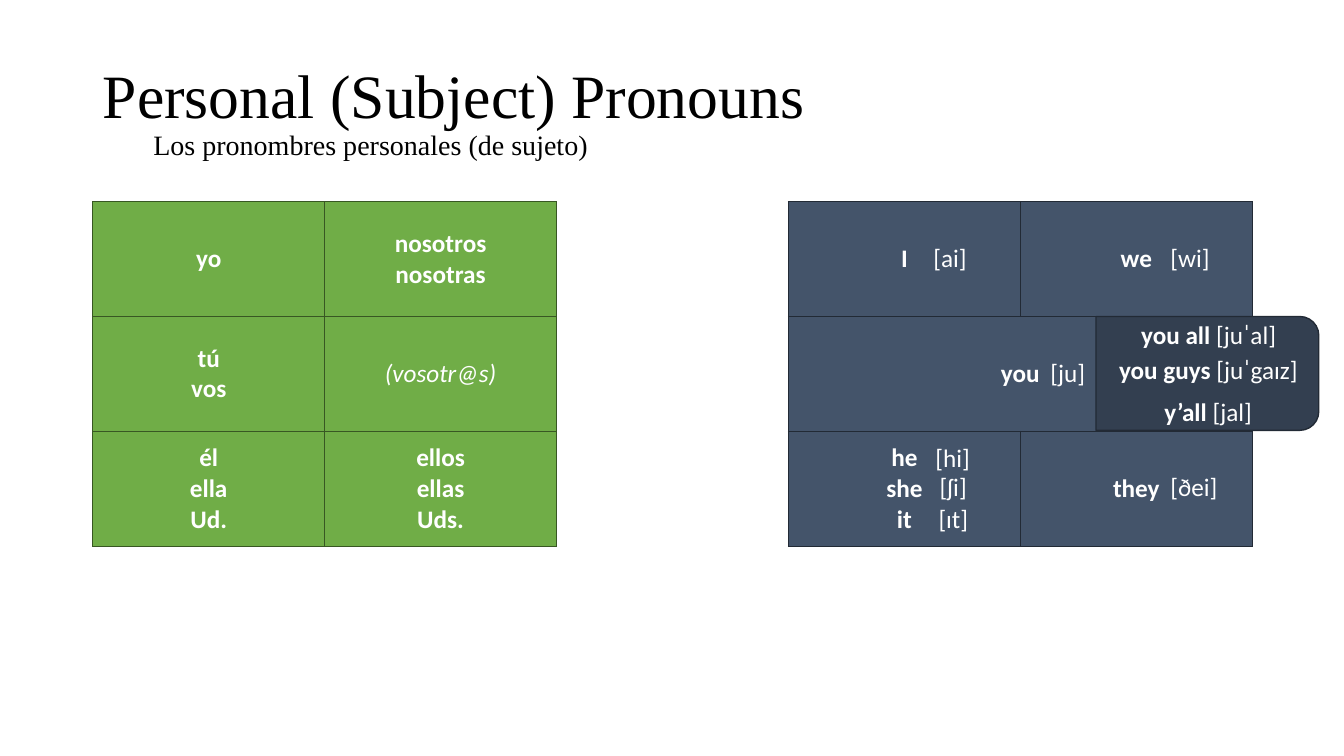
from dataclasses import dataclass

from lxml.etree import SubElement
from pptx import Presentation
from pptx.dml.color import RGBColor
from pptx.enum.shapes import MSO_SHAPE
from pptx.enum.text import MSO_ANCHOR, MSO_AUTO_SIZE, PP_ALIGN
from pptx.oxml.ns import qn
from pptx.slide import Slide
from pptx.table import _Cell
from pptx.util import Inches, Pt

COLORS = {
    "black": "000000",
    "white": "FFFFFF",
    "spanish": "70AD47",
    "spanish_line": "385723",
    "english": "44546A",
    "english_line": "222A35",
    "plural_you": "333F50",
}
COLUMN_WIDTH = 2.3
ROW_HEIGHT = 1.14
GAP_COLUMN = 2
PRONOUNS = [
    ["yo", "nosotros\nnosotras", "", "I", "we"],
    ["tú\nvos", "(vosotr@s)", "", "you", ""],
    ["él\nella\nUd.", "ellos\nellas\nUds.", "", "he\nshe\nit", "they"],
]


@dataclass
class Sound:
    """A pronunciation label, with the bold word before it if there is one."""
    text: str
    left: float
    top: float
    width: float
    word: str = ""


TABLE_SOUNDS = [
    Sound("[ai]", 9.16, 2.35, 0.54),
    Sound("[wi]", 11.51, 2.35, 0.59),
    Sound("[ju]", 10.32, 3.5, 0.55),
    Sound("[hi]", 9.18, 4.34, 0.55),
    Sound("[ʃi]", 9.22, 4.63, 0.47),
    Sound("[ɪt]", 9.21, 4.94, 0.52),
    Sound("[ðei]", 11.51, 4.63, 0.67),
]
PLURAL_SOUNDS = [
    Sound("[juˈal]", 11.22, 3.12, 1.55, "you all "),
    Sound("[juˈgaɪz]", 11, 3.47, 1.99, "you guys "),
    Sound("[jal]", 11.45, 3.88, 1.08, "y’all "),
]


def color(name: str) -> RGBColor:
    return RGBColor.from_string(COLORS[name])


def format_font(font, size: float, name: str = "Calibri", shade: str = "white") -> None:
    font.size = Pt(size)
    font.name = name
    font.color.rgb = color(shade)


def set_borders(cell: _Cell, **sides: str) -> None:
    """Draw the sides named L, R, T, B in the given colours and clear the rest."""
    properties = cell._tc.get_or_add_tcPr()
    for side in "LRTB":
        line = SubElement(properties, qn(f"a:ln{side}"), w=str(Pt(1)))
        if side in sides:
            fill = SubElement(line, qn("a:solidFill"))
            SubElement(fill, qn("a:srgbClr"), val=COLORS[sides[side]])
        else:
            SubElement(line, qn("a:noFill"))


def add_title(page: Slide) -> None:
    title = page.shapes.title
    title.left, title.top = Inches(0.92), Inches(0.4)
    title.width, title.height = Inches(11.5), Inches(1.45)
    frame = title.text_frame
    frame.text = "Personal (Subject) Pronouns\v\tLos pronombres personales (de sujeto)"
    frame.word_wrap = True
    frame.auto_size = MSO_AUTO_SIZE.NONE
    frame.vertical_anchor = MSO_ANCHOR.MIDDLE
    para = frame.paragraphs[0]
    para.alignment = PP_ALIGN.LEFT
    para.line_spacing = 0.9
    for span, size in zip(para.runs, (44, 20)):
        format_font(span.font, size, "Times New Roman", "black")


def fill_cell(cell: _Cell, text: str, column: int) -> None:
    if column == GAP_COLUMN:
        set_borders(cell, L="spanish_line", R="english_line")
        cell.fill.background()
        return
    language = "spanish" if column < GAP_COLUMN else "english"
    set_borders(cell, **dict.fromkeys("LRTB", f"{language}_line"))
    cell.fill.solid()
    cell.fill.fore_color.rgb = color(language)
    cell.vertical_anchor = MSO_ANCHOR.MIDDLE
    cell.text_frame.text = text
    for para in cell.text_frame.paragraphs:
        para.alignment = PP_ALIGN.CENTER
        for span in para.runs:
            format_font(span.font, 18)
            span.font.italic = text.startswith("(")
            span.font.bold = not span.font.italic


def add_pronoun_table(page: Slide) -> None:
    rows, columns = len(PRONOUNS), len(PRONOUNS[0])
    table = page.shapes.add_table(
        rows, columns, Inches(0.92), Inches(2),
        Inches(COLUMN_WIDTH * columns), Inches(ROW_HEIGHT * rows)).table
    table.first_row = table.horz_banding = False
    for column in table.columns:
        column.width = Inches(COLUMN_WIDTH)
    for row in table.rows:
        row.height = Inches(ROW_HEIGHT)
    for row_index, words in enumerate(PRONOUNS):
        for column_index, text in enumerate(words):
            fill_cell(table.cell(row_index, column_index), text, column_index)
    table.cell(1, 3).merge(table.cell(1, 4))


def add_plural_panel(page: Slide) -> None:
    panel = page.shapes.add_shape(
        MSO_SHAPE.ROUND_2_SAME_RECTANGLE,
        Inches(11.41), Inches(2.6), Inches(1.13), Inches(2.21))
    panel.rotation = 90
    panel.shadow.inherit = False
    panel.fill.solid()
    panel.fill.fore_color.rgb = color("plural_you")
    panel.line.color.rgb = color("english_line")
    panel.line.width = Pt(1)


def add_sound(page: Slide, sound: Sound) -> None:
    box = page.shapes.add_textbox(
        Inches(sound.left), Inches(sound.top), Inches(sound.width), Inches(0.4))
    frame = box.text_frame
    frame.word_wrap = False
    frame.auto_size = MSO_AUTO_SIZE.SHAPE_TO_FIT_TEXT
    for text, bold in ((sound.word, True), (sound.text, False)):
        if text:
            span = frame.paragraphs[0].add_run()
            span.text = text
            format_font(span.font, 18)
            span.font.bold = bold


def main() -> None:
    deck = Presentation()
    deck.slide_width, deck.slide_height = Inches(13.33), Inches(7.5)
    page = deck.slides.add_slide(deck.slide_layouts[5])
    add_title(page)
    add_pronoun_table(page)
    add_plural_panel(page)
    for sound in TABLE_SOUNDS + PLURAL_SOUNDS:
        add_sound(page, sound)
    deck.save("out.pptx")


if __name__ == "__main__":
    main()
